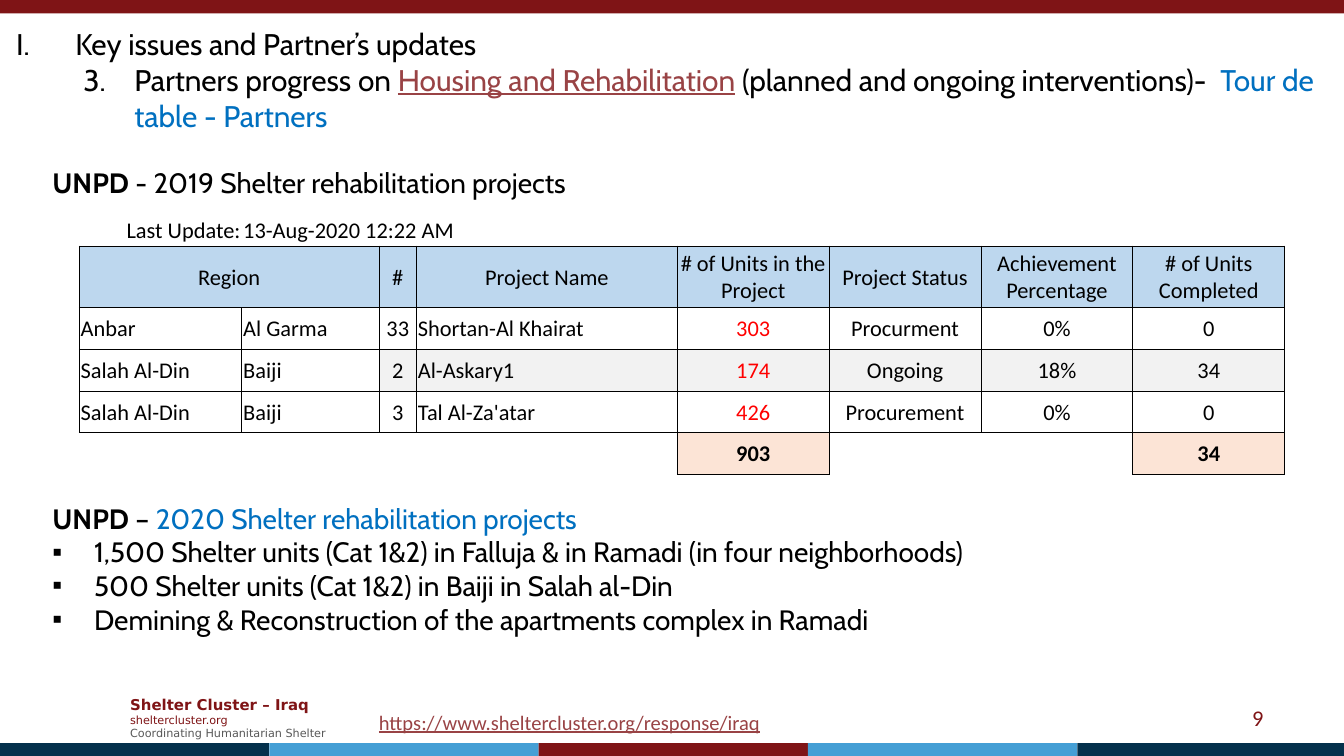
from lxml.etree import SubElement
from pptx import Presentation
from pptx.dml.color import RGBColor
from pptx.enum.shapes import MSO_SHAPE
from pptx.enum.text import MSO_ANCHOR, MSO_AUTO_SIZE, PP_ALIGN
from pptx.oxml.ns import qn
from pptx.util import Inches, Pt

BLACK = RGBColor(0x00, 0x00, 0x00)
WHITE = RGBColor(0xFF, 0xFF, 0xFF)
MAROON = RGBColor(0x7F, 0x14, 0x16)
NAVY = RGBColor(0x04, 0x31, 0x4C)
SKY = RGBColor(0x45, 0x9F, 0xD5)
ROSE = RGBColor(0x99, 0x43, 0x45)
BLUE = RGBColor(0x00, 0x70, 0xC0)
RED = RGBColor(0xFF, 0x00, 0x00)
SLATE = RGBColor(0x59, 0x59, 0x59)
PALE = RGBColor(0xBD, 0xD7, 0xEE)
GREY = RGBColor(0xF2, 0xF2, 0xF2)
PEACH = RGBColor(0xFC, 0xE4, 0xD6)

HEAD = {"name": "Cabin", "size": Pt(16), "color": BLACK}
BODY = {**HEAD, "size": Pt(15)}
BOLD = {**BODY, "bold": True}
CELL = {"name": "Calibri", "size": Pt(12), "color": BLACK}
ORG = {"name": "DejaVu Sans", "size": Pt(6), "color": MAROON}
LINK = {"name": "Calibri", "size": Pt(11), "color": ROSE, "underline": True}
PLAIN_TABLE = "{2D5ABB26-0587-4C30-8999-92F81FD0307C}"

WIDTHS = [1.21, 1.02, 0.28, 1.94] + [1.13] * 4
HEIGHTS = [0.23, 0.46] + [0.31] * 4
ROWS = [
    ["Last Update:", "13-Aug-2020 12:22 AM", "", "", "", "", "", ""],
    ["Region", "", "#", "Project Name", "# of Units in the Project",
     "Project Status", "Achievement Percentage", "# of Units Completed"],
    ["Anbar", "Al Garma", "33", "Shortan-Al Khairat", "303", "Procurment", "0%", "0"],
    ["Salah Al-Din", "Baiji", "2", "Al-Askary1", "174", "Ongoing", "18%", "34"],
    ["Salah Al-Din", "Baiji", "3", "Tal Al-Za'atar", "426", "Procurement", "0%", "0"],
    ["", "", "", "", "903", "", "", "34"],
]


def place(shape, box):
    """Move a shape to a box given in inches."""
    for key, val in zip(("left", "top", "width", "height"), box):
        setattr(shape, key, Inches(val))


def write(par, text, form):
    """Add one run with the given font values."""
    run = par.add_run()
    run.text = text
    for key, val in form.items():
        if key == "color":
            run.font.color.rgb = val
        else:
            setattr(run.font, key, val)


def mark(par, left, hang, tag, **attrs):
    """Give a paragraph its indent and bullet."""
    props = par._p.get_or_add_pPr()
    props.set("marL", str(Inches(left)))
    props.set("indent", str(-Inches(hang)))
    SubElement(props, qn(f"a:{tag}"), **attrs)


def fill(frame, lines):
    """Write lines of runs and return their paragraphs."""
    pars = []
    for line in lines:
        par = frame.add_paragraph() if pars else frame.paragraphs[0]
        par.alignment = PP_ALIGN.LEFT
        par.space_before = Pt(0)
        for text, form in line:
            write(par, text, form)
        pars.append(par)
    return pars


def holder(shape, box, lines):
    """Move and fill a placeholder."""
    place(shape, box)
    frame = shape.text_frame
    frame.auto_size = MSO_AUTO_SIZE.NONE
    frame.vertical_anchor = MSO_ANCHOR.TOP
    return fill(frame, lines)


def label(slide, box, lines, anchor=MSO_ANCHOR.TOP, wrap=True):
    """Add a text box."""
    frame = slide.shapes.add_textbox(*map(Inches, box)).text_frame
    frame.word_wrap = wrap
    frame.vertical_anchor = anchor
    return fill(frame, lines)


def bands(slide, box, colors):
    """Split a box into equal colour bands."""
    left, top, width, height = box
    step = width / len(colors)
    for i, color in enumerate(colors):
        spot = (left + i * step, top, step, height)
        bar = slide.shapes.add_shape(MSO_SHAPE.RECTANGLE, *map(Inches, spot))
        bar.shadow.inherit = False
        bar.fill.solid()
        bar.fill.fore_color.rgb = color
        bar.line.fill.background()


def heading(slide, box):
    """Fill the title with its two numbered levels."""
    first, second = holder(slide.shapes.title, box, [
        [("Key issues and Partner’s updates", HEAD)],
        [("Partners progress on ", HEAD),
         ("Housing and Rehabilitation", {**HEAD, "color": ROSE, "underline": True}),
         (" (planned and ongoing interventions)- ", HEAD),
         (" Tour de table - Partners", {**HEAD, "color": BLUE})],
    ])
    second.level = 1
    mark(first, 0.44, 0.44, "buAutoNum", type="romanUcPeriod")
    mark(second, 0.88, 0.38, "buAutoNum", type="arabicPeriod", startAt="3")


def projects(slide, box):
    """Fill the body above and below the table."""
    lines = [
        [("UNPD", BOLD), (" - 2019 Shelter rehabilitation projects", BODY)],
        [("UNPD", BOLD), (" – ", BODY),
         ("2020 Shelter rehabilitation projects", {**BODY, "color": BLUE})],
        [("1,500 Shelter units (Cat 1&2) in Falluja & in Ramadi (in four neighborhoods)", BODY)],
        [("500 Shelter units (Cat 1&2) in Baiji in Salah al-Din", BODY)],
        [("Demining & Reconstruction of the apartments complex in Ramadi", BODY)],
    ]
    pars = holder(slide.placeholders[1], box, lines)
    pars[1].space_before = Pt(162)
    for par in pars[:2]:
        mark(par, 0, 0, "buNone")
    for par in pars[2:]:
        mark(par, 0.31, 0.31, "buChar", char="▪")


def edge(cell, sides):
    """Draw thin black borders on the given sides."""
    props = cell._tc.get_or_add_tcPr()
    for side in sides:
        line = SubElement(props, qn(f"a:ln{side}"), w=str(Pt(0.5)))
        paint = SubElement(line, qn("a:solidFill"))
        SubElement(paint, qn("a:srgbClr"), val=str(BLACK))


def shade(row, col, text):
    """Choose the fill of a table cell."""
    if row == 5:
        return PEACH if text else None
    if row == 3:
        return GREY if col > 1 else None
    return {0: WHITE, 1: PALE}.get(row)


def align(row, col):
    """Choose the alignment of a table cell."""
    if row == 0:
        return PP_ALIGN.LEFT if col else PP_ALIGN.RIGHT
    return PP_ALIGN.LEFT if row > 1 and col in (0, 1, 3) else PP_ALIGN.CENTER


def dress(cell, row, col, text):
    """Format and fill one table cell."""
    for key in ("margin_left", "margin_right", "margin_top"):
        setattr(cell, key, Inches(0.01))
    cell.margin_bottom = 0
    cell.vertical_anchor = MSO_ANCHOR.MIDDLE
    edge(cell, "B" if row == 0 else "LRTB" if row < 5 or text else "T")
    color = shade(row, col, text)
    if color is None:
        cell.fill.background()
    else:
        cell.fill.solid()
        cell.fill.fore_color.rgb = color
    par = cell.text_frame.paragraphs[0]
    par.alignment = align(row, col)
    if text:
        red = row in (2, 3, 4) and col == 4
        write(par, text, {**CELL, "color": RED if red else BLACK, "bold": row == 5})
    else:
        SubElement(par._p, qn("a:endParaRPr"), sz="1200")


def units(slide, box):
    """Build the table of shelter units."""
    table = slide.shapes.add_table(len(ROWS), len(WIDTHS), *map(Inches, box)).table
    table.first_row = table.horz_banding = False
    table._tbl.tblPr.find(qn("a:tableStyleId")).text = PLAIN_TABLE
    for col, width in zip(table.columns, WIDTHS):
        col.width = Inches(width)
    for row, height in zip(table.rows, HEIGHTS):
        row.height = Inches(height)
    for r, texts in enumerate(ROWS):
        for c, text in enumerate(texts):
            dress(table.cell(r, c), r, c, text)
    table.cell(0, 1).merge(table.cell(0, 3))
    table.cell(1, 0).merge(table.cell(1, 1))


def footer(slide, box):
    """Place the organisation, link and page number."""
    left, top, _, height = box
    label(slide, (left + 0.87, top, 1.73, height), [
        [("Shelter Cluster – Iraq", {**ORG, "size": Pt(8), "bold": True})],
        [("sheltercluster.org", ORG)],
        [("Coordinating Humanitarian Shelter", {**ORG, "color": SLATE})],
    ], MSO_ANCHOR.MIDDLE)
    label(slide, (left + 2.72, top + 0.11, 3.09, 0.29),
          [[("https://www.sheltercluster.org/response/iraq", LINK)]], wrap=False)
    page = label(slide, (left + 7.17, top + 0.07, 2.33, 0.3),
                 [[("9", {**CELL, "color": MAROON})]], MSO_ANCHOR.MIDDLE)
    page[0].alignment = PP_ALIGN.RIGHT


def main():
    """Build and save the slide."""
    deck = Presentation()
    deck.slide_width = Inches(10)
    deck.slide_height = deck.slide_width * 9 // 16
    slide = deck.slides.add_slide(deck.slide_layouts[1])
    bands(slide, (0, 0, 10, 0.1), [MAROON])
    bands(slide, (0, 5.53, 10.02, 0.1), [NAVY, SKY, MAROON, SKY, NAVY])
    heading(slide, (0.02, 0.14, 9.95, 0.91))
    projects(slide, (0.29, 1.18, 9.6, 3.64))
    units(slide, (0.59, 1.6, 8.97, 1.93))
    footer(slide, (0, 5.12, 10, 0.44))
    deck.save("out.pptx")


if __name__ == "__main__":
    main()
